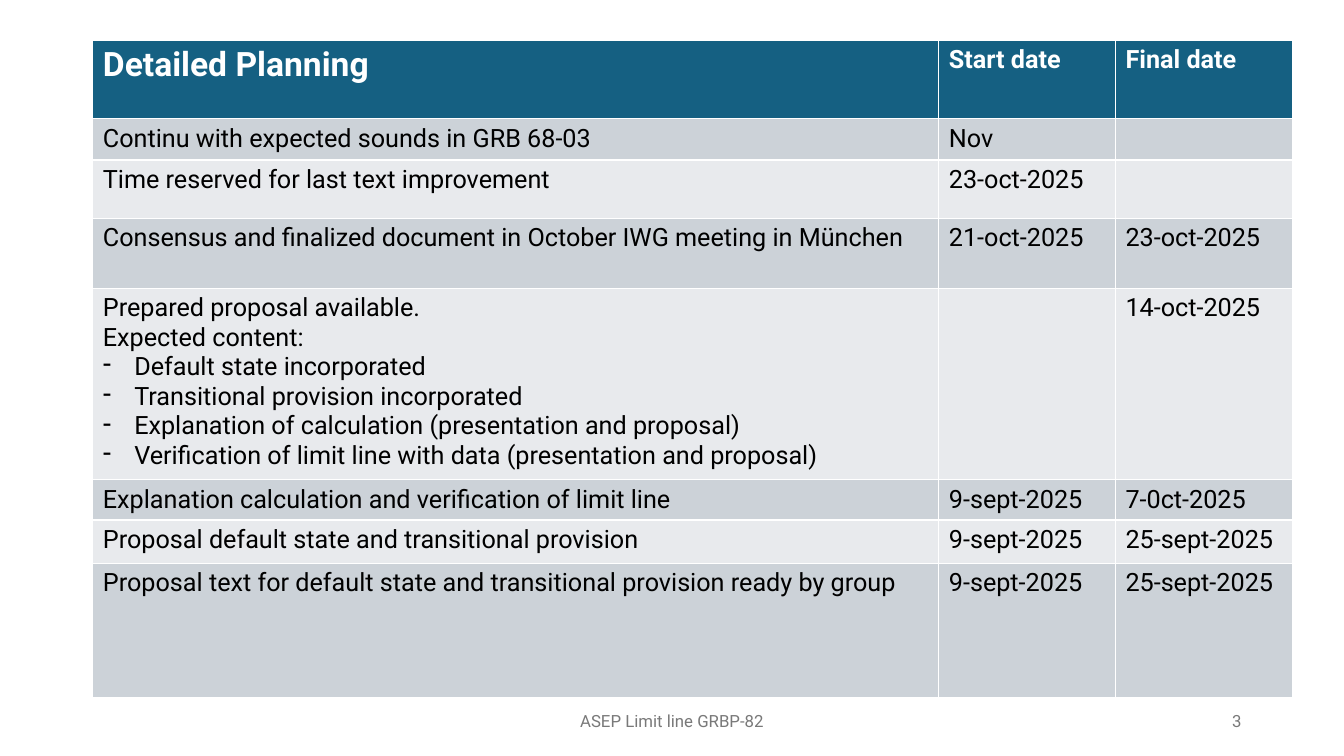
"""Build the detailed planning slide: a dated task table with a footer."""
import lxml.etree
import pptx
import pptx.dml.color
import pptx.enum.text
import pptx.oxml.ns
import pptx.util

Cm = pptx.util.Cm
ALIGN = pptx.enum.text.PP_ALIGN


def colour(hex_string):
    return pptx.dml.color.RGBColor.from_string(hex_string)


def style(paragraph, size, hex_string, bold=False):
    paragraph.font.name = "Roboto"
    paragraph.font.size = pptx.util.Pt(size)
    paragraph.font.bold = bold
    paragraph.font.color.rgb = colour(hex_string)


presentation = pptx.Presentation()
presentation.slide_width = Cm(33.87)
presentation.slide_height = Cm(19.05)
slide = presentation.slides.add_slide(presentation.slide_layouts[6])

footers = [
    ("ASEP Limit line GRBP-82", 11.22, 11.43, ALIGN.CENTER),
    ("3", 23.92, 7.62, ALIGN.RIGHT),
]
for wording, left, width, alignment in footers:
    footer = slide.shapes.add_textbox(Cm(left), Cm(17.66), Cm(width), Cm(1.01)).text_frame
    footer.word_wrap = True
    footer.vertical_anchor = pptx.enum.text.MSO_ANCHOR.MIDDLE
    footer.text = wording
    footer.paragraphs[0].alignment = alignment
    style(footer.paragraphs[0], 12, "797979")

proposal_content = "\n".join([
    "Prepared proposal available.",
    "Expected content:",
    "- Default state incorporated",
    "- Transitional provision incorporated",
    "- Explanation of calculation (presentation and proposal)",
    "- Verification of limit line with data (presentation and proposal)",
])
tasks = [
    (1.97, "Detailed Planning", "Start date", "Final date"),
    (1.04, "Continu with expected sounds in GRB 68-03", "Nov", ""),
    (1.47, "Time reserved for last text improvement", "23-oct-2025", ""),
    (1.76, "Consensus and finalized document in October IWG meeting in München",
     "21-oct-2025", "23-oct-2025"),
    (4.72, proposal_content, "", "14-oct-2025"),
    (1.01, "Explanation calculation and verification of limit line",
     "9-sept-2025", "7-0ct-2025"),
    (1.09, "Proposal default state and transitional provision",
     "9-sept-2025", "25-sept-2025"),
    (3.38, "Proposal text for default state and transitional provision ready by group",
     "9-sept-2025", "25-sept-2025"),
]
column_widths = [21.32, 4.45, 4.47]

planning = slide.shapes.add_table(
    len(tasks), len(column_widths), Cm(2.34), Cm(1.02),
    Cm(sum(column_widths)), Cm(sum(task[0] for task in tasks))).table
for column, width in zip(planning.columns, column_widths):
    column.width = Cm(width)

for row_number, (height, *entries) in enumerate(tasks):
    planning.rows[row_number].height = Cm(height)
    is_header = row_number == 0
    band = "156082" if is_header else ("E8EAED", "CCD2D8")[row_number % 2]
    for column_number, entry in enumerate(entries):
        cell = planning.cell(row_number, column_number)
        cell.fill.solid()
        cell.fill.fore_color.rgb = colour(band)
        cell.text = entry
        for paragraph in cell.text_frame.paragraphs:
            if paragraph.text.startswith("- "):
                paragraph.runs[0].text = paragraph.text[2:]
                properties = paragraph._p.get_or_add_pPr()
                properties.set("marL", str(Cm(0.79)))
                properties.set("indent", str(Cm(-0.79)))
                bullet = lxml.etree.SubElement(properties, pptx.oxml.ns.qn("a:buChar"))
                bullet.set("char", "-")
            style(paragraph, 24 if is_header and column_number == 0 else 18,
                  "FFFFFF" if is_header else "000000", is_header)

presentation.save("out.pptx")
